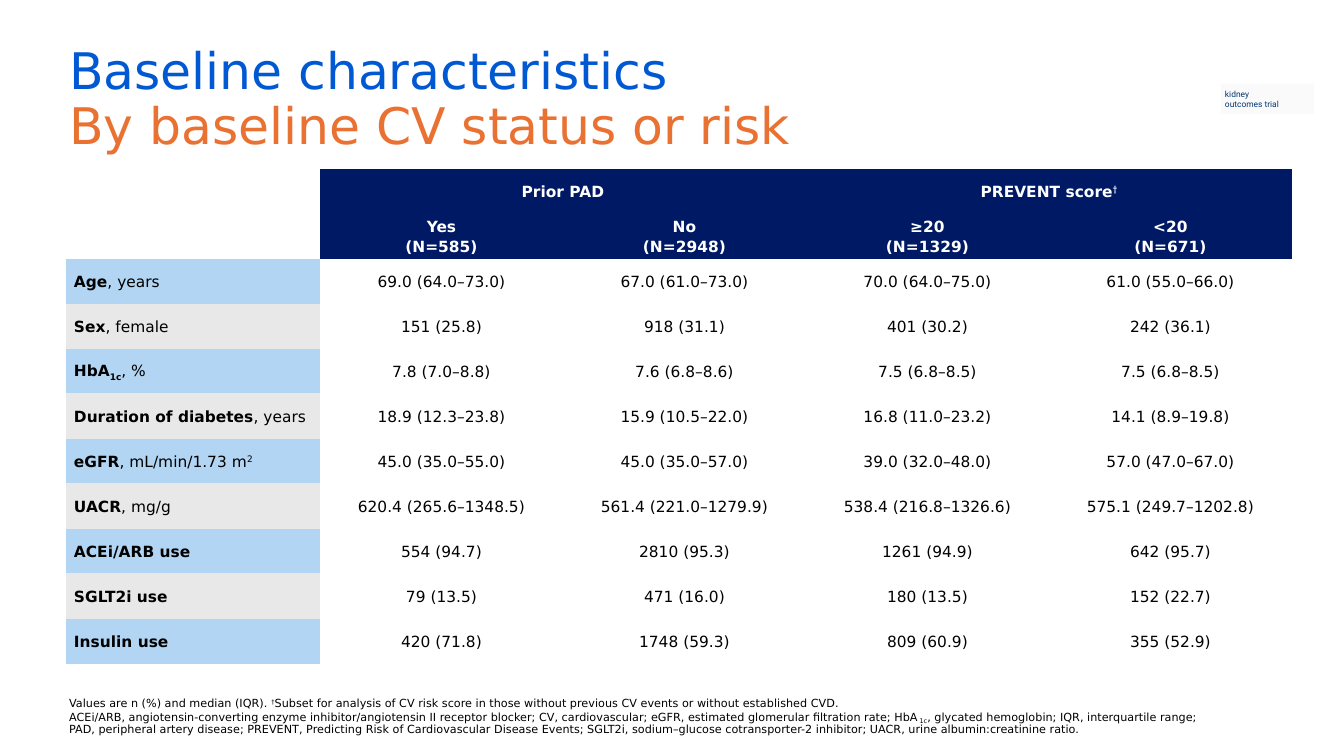
from copy import deepcopy

from lxml import etree
from pptx import Presentation
from pptx.dml.color import RGBColor
from pptx.enum.shapes import MSO_SHAPE
from pptx.enum.text import MSO_ANCHOR, MSO_AUTO_SIZE, PP_ALIGN
from pptx.oxml.ns import qn
from pptx.util import Pt

RECT = MSO_SHAPE.RECTANGLE
MIDDLE, BOTTOM = MSO_ANCHOR.MIDDLE, MSO_ANCHOR.BOTTOM
LEFT, CENTER = PP_ALIGN.LEFT, PP_ALIGN.CENTER
FIXED = MSO_AUTO_SIZE.NONE

COLORS = {"title": "0059D2", "subtitle": "E97132", "header": "001965",
          "blue": "B1D5F2", "grey": "E8E8E8", "white": "FFFFFF",
          "black": "000000", "tag": "FAFAFA", "tag_text": "033572"}
FONT = "DejaVu Sans"
NO_STYLE = "{2D5ABB26-0587-4C30-8999-92F81FD0307C}"
SUP, SUB = "30000", "-25000"

# Each label is a list of (text, bold, baseline)
ROWS = [
    ([("Age", True, None), (", years", False, None)],
     ["69.0 (64.0–73.0)", "67.0 (61.0–73.0)", "70.0 (64.0–75.0)", "61.0 (55.0–66.0)"]),
    ([("Sex", True, None), (", female", False, None)],
     ["151 (25.8)", "918 (31.1)", "401 (30.2)", "242 (36.1)"]),
    ([("HbA", True, None), ("1c", True, SUB), (", %", False, None)],
     ["7.8 (7.0–8.8)", "7.6 (6.8–8.6)", "7.5 (6.8–8.5)", "7.5 (6.8–8.5)"]),
    ([("Duration of diabetes", True, None), (", years", False, None)],
     ["18.9 (12.3–23.8)", "15.9 (10.5–22.0)", "16.8 (11.0–23.2)", "14.1 (8.9–19.8)"]),
    ([("eGFR", True, None), (", mL/min/1.73 m", False, None), ("2", False, SUP)],
     ["45.0 (35.0–55.0)", "45.0 (35.0–57.0)", "39.0 (32.0–48.0)", "57.0 (47.0–67.0)"]),
    ([("UACR", True, None), (", mg/g", False, None)],
     ["620.4 (265.6–1348.5)", "561.4 (221.0–1279.9)",
      "538.4 (216.8–1326.6)", "575.1 (249.7–1202.8)"]),
    ([("ACEi/ARB use", True, None)],
     ["554 (94.7)", "2810 (95.3)", "1261 (94.9)", "642 (95.7)"]),
    ([("SGLT2i use", True, None)],
     ["79 (13.5)", "471 (16.0)", "180 (13.5)", "152 (22.7)"]),
    ([("Insulin use", True, None)],
     ["420 (71.8)", "1748 (59.3)", "809 (60.9)", "355 (52.9)"]),
]
GROUPS = [[("Prior PAD", True, None)],
          [("PREVENT score", True, None), ("†", True, SUP)]]
SUBGROUPS = ["Yes\n(N=585)", "No\n(N=2948)", "≥20\n(N=1329)", "<20\n(N=671)"]
FOOTNOTE = [
    ("Values are n (%) and median (IQR). ", False, None), ("†", False, SUP),
    ("Subset for analysis of CV risk score in those without previous CV events or "
     "without established CVD. \nACEi/ARB, angiotensin-converting enzyme "
     "inhibitor/angiotensin II receptor blocker; CV, cardiovascular; eGFR, estimated "
     "glomerular filtration rate; HbA", False, None), ("1c", False, SUB),
    (", glycated hemoglobin; IQR, interquartile range; \nPAD, peripheral artery "
     "disease; PREVENT, Predicting Risk of Cardiovascular Disease Events; SGLT2i, "
     "sodium–glucose cotransporter-2 inhibitor; UACR, urine albumin:creatinine ratio.",
     False, None),
]


def px(n):
    return round(n * 914400 / 100.8)


def rgb(name):
    return RGBColor.from_string(COLORS[name])


def style(r, size, color, bold=False, font=FONT):
    r.font.size, r.font.bold, r.font.name = Pt(size), bold, font
    r.font.color.rgb = rgb(color)


def write(p, parts, size, color):
    """Add runs; a newline becomes a line break of the same size."""
    for text, bold, baseline in parts:
        for i, line in enumerate(text.split("\n")):
            if i:
                p.add_line_break()
            r = p.add_run()
            r.text = line
            style(r, size, color, bold, "Calibri" if bold and line == "†" else FONT)
            if baseline:
                r.font._element.set("baseline", baseline)
    size_breaks(p)


def size_breaks(p):
    for br in p._p.findall(qn("a:br")):
        br.insert(0, deepcopy(p.runs[0].font._element))


def place(s, box):
    s.left, s.top, s.width, s.height = map(px, box)


def add_title(slide, box):
    s = slide.shapes.title
    place(s, box)
    tf = s.text_frame
    tf.auto_size, tf.vertical_anchor = FIXED, MIDDLE
    p = tf.paragraphs[0]
    p.text = "Baseline characteristics \vBy baseline CV status or risk"
    p.alignment, p.line_spacing = LEFT, 0.9
    for r, color in zip(p.runs, ("title", "subtitle")):
        style(r, 36, color)
    size_breaks(p)


def add_footnote(slide, box):
    s = slide.placeholders[1]
    place(s, box)
    tf = s.text_frame
    tf.auto_size, tf.vertical_anchor = FIXED, BOTTOM
    p = tf.paragraphs[0]
    p.line_spacing, p.space_before = 0.9, Pt(0)
    pPr = p._p.get_or_add_pPr()
    pPr.set("marL", "0")
    pPr.set("indent", "0")
    etree.SubElement(pPr, qn("a:buNone"))
    write(p, FOOTNOTE, 8, "black")


def add_trial_tag(slide, box):
    s = slide.shapes.add_shape(RECT, *map(px, box))
    s.shadow.inherit = False
    s.fill.solid()
    s.fill.fore_color.rgb = rgb("tag")
    s.line.fill.background()
    tf = s.text_frame
    tf.word_wrap, tf.vertical_anchor = True, MIDDLE
    tf.margin_left, tf.margin_right = px(4), 0
    tf.margin_top = tf.margin_bottom = px(5)
    tf.text = "kidney\noutcomes trial"
    for p in tf.paragraphs:
        p.alignment = LEFT
        style(p.runs[0], 6, "tag_text", font="Roboto")


def set_cell(cell, parts, color="black", fill=None, align=CENTER):
    cell.margin_left = cell.margin_right = px(8)
    cell.margin_top = cell.margin_bottom = 0
    cell.vertical_anchor = MIDDLE
    if fill:
        cell.fill.solid()
        cell.fill.fore_color.rgb = rgb(fill)
    else:
        cell.fill.background()
    p = cell.text_frame.paragraphs[0]
    p.alignment, p.line_spacing, p.space_after = align, 1.07, Pt(8)
    write(p, parts, 11, color)


def add_border(cell, side):
    ln = etree.Element(qn("a:ln" + side), w=str(Pt(1)))
    fill = etree.SubElement(ln, qn("a:solidFill"))
    etree.SubElement(fill, qn("a:srgbClr"), val=COLORS["grey"])
    cell._tc.get_or_add_tcPr().insert(0, ln)


def add_baseline_table(slide, box, label_width):
    n_rows, n_values = len(ROWS) + 2, len(SUBGROUPS)
    table = slide.shapes.add_table(n_rows, n_values + 1, *map(px, box)).table
    table.first_row = table.horz_banding = False
    table._tbl.tblPr.find(qn("a:tableStyleId")).text = NO_STYLE
    for i, col in enumerate(table.columns):
        col.width = px((box[2] - label_width) / n_values if i else label_width)
    for row in table.rows:
        row.height = px(box[3] / n_rows)

    # Two header rows
    for i in range(2):
        set_cell(table.cell(i, 0), [])
    for i, parts in enumerate(GROUPS):
        first = table.cell(0, 1 + 2 * i)
        first.merge(table.cell(0, 2 + 2 * i))
        set_cell(first, parts, "white", "header")
    for c, text in enumerate(SUBGROUPS, 1):
        set_cell(table.cell(1, c), [(text, True, None)], "white", "header")

    # Label column and values
    for i, (label, values) in enumerate(ROWS):
        cell = table.cell(i + 2, 0)
        set_cell(cell, label, fill="grey" if i % 2 else "blue", align=LEFT)
        if 2 <= i < len(ROWS) - 1:
            add_border(cell, "B")
        if i > 2:
            add_border(cell, "T")
        for c, value in enumerate(values, 1):
            set_cell(table.cell(i + 2, c), [(value, False, None)])


def main():
    prs = Presentation()
    prs.slide_width, prs.slide_height = px(1344), px(756)
    slide = prs.slides.add_slide(prs.slide_layouts[1])
    add_trial_tag(slide, (1221, 84, 93, 30))
    add_footnote(slide, (59, 652, 1226, 89))
    add_title(slide, (59, 40, 967, 121))
    add_baseline_table(slide, (66, 169, 1226, 495), 254)
    prs.save("out.pptx")


if __name__ == "__main__":
    main()
